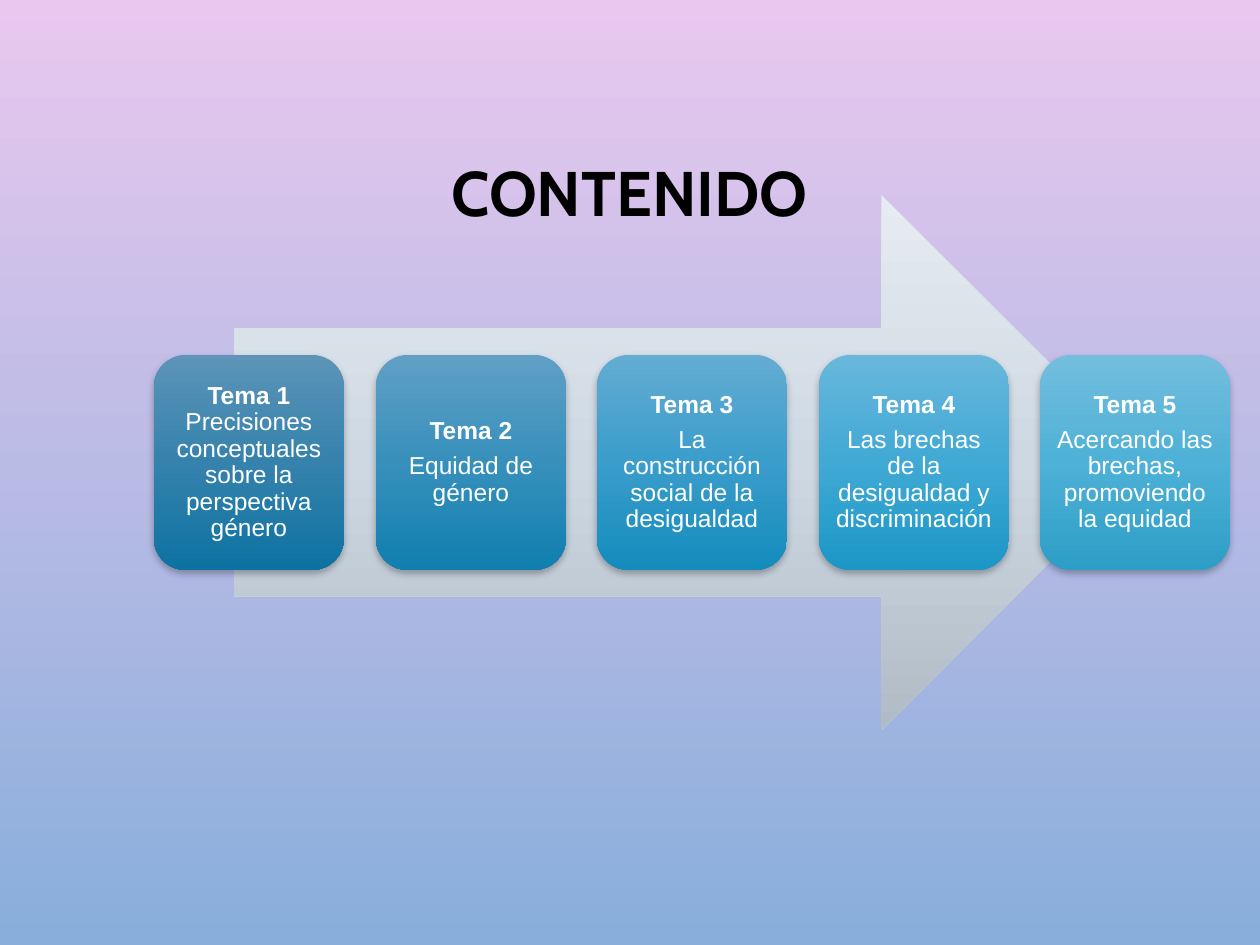
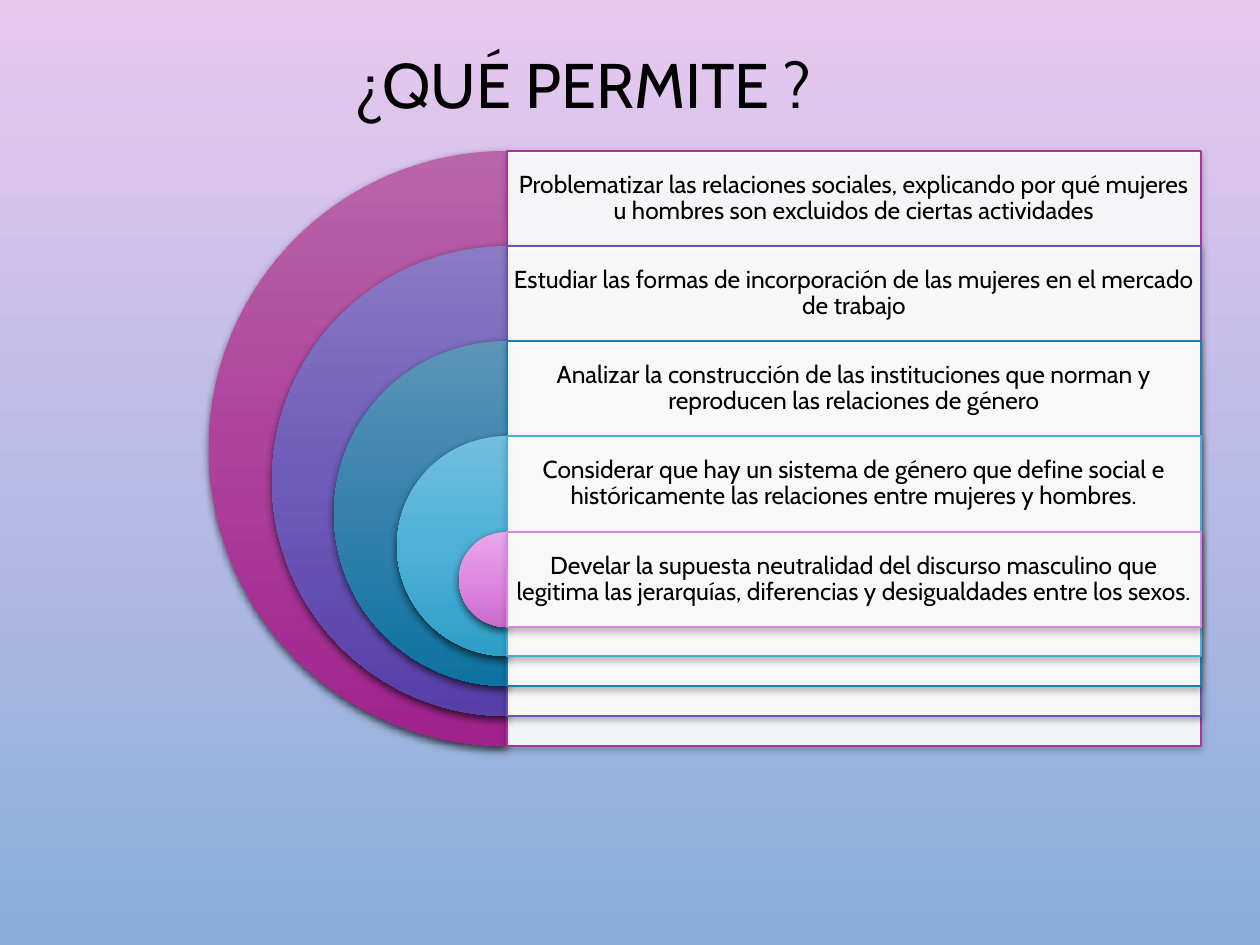
from dataclasses import dataclass

from lxml import etree
from pptx import Presentation
from pptx import util as u
from pptx.dml.color import RGBColor
from pptx.enum import shapes, text
from pptx.oxml.ns import qn

SCALE = 914400 / 126


def px(length):
    return u.Emu(round(length * SCALE))


@dataclass(frozen=True)
class Theme:
    heading_font: str = "Cabin"
    card_font: str = "Arial"
    title_size: int = 36
    body_size: int = 14
    paragraph_gap: int = 5
    line_spacing: float = 0.9
    inset: int = 7
    ink: str = "000000"
    paper: str = "FFFFFF"
    background: tuple = ("E9C8EF", "89AEDB")
    arrow: tuple = ("E6ECF1", "CED8E3", "B0BBC6")
    teal: tuple = ("5D94B8", "3582AD", "0D72A1")
    steel: tuple = ("60A0C5", "3790BC", "107FAF")
    azure: tuple = ("63ACD2", "3A9DCB", "148CBD")
    sky: tuple = ("69B7DC", "40A9D5", "1C97C6")
    aqua: tuple = ("73BEDE", "4EB1D7", "2D9EC6")
    magenta: tuple = ("B965AA", "AE429D", "A0228D")
    violet: tuple = ("887AC4", "6F5BB9", "563FA7")
    pink: tuple = ("E7A8E9", "DF89E2", "C86BCB")
    magenta_border: str = "AC339A"
    violet_border: str = "6953B7"
    teal_border: str = "1D7EAB"
    aqua_border: str = "43AFD6"
    pink_border: str = "DE85E1"


def add_color(parent, color, opacity=100):
    element = etree.SubElement(parent, qn("a:srgbClr"), val=color)
    if opacity < 100:
        etree.SubElement(element, qn("a:alpha"), val=str(opacity * 1000))


def set_gradient(fill, owner, colors):
    fill.gradient()
    fill.gradient_angle = 270
    stops = next(owner.iter(qn("a:gsLst")))
    stops.clear()
    for index, color in enumerate(colors):
        position = index * 100000 // (len(colors) - 1)
        add_color(etree.SubElement(stops, qn("a:gs"), pos=str(position)), color)


def set_shadow(shape, opacity, blur, distance=2):
    effects = shape.element.spPr.find(qn("a:effectLst"))
    shadow = etree.SubElement(
        effects, qn("a:outerShdw"), blurRad=str(u.Pt(blur)),
        dist=str(u.Pt(distance)), dir="5400000", rotWithShape="0")
    add_color(shadow, "000000", opacity)


def write_text(frame, paragraphs, *, font, size, color, spacing, gap=0, inset=None):
    frame.word_wrap = True
    frame.vertical_anchor = text.MSO_ANCHOR.MIDDLE
    if inset is not None:
        frame.margin_left = frame.margin_right = px(inset)
        frame.margin_top = frame.margin_bottom = px(inset)
    for index, runs in enumerate(paragraphs):
        paragraph = frame.paragraphs[0] if index == 0 else frame.add_paragraph()
        paragraph.alignment = text.PP_ALIGN.CENTER
        paragraph.line_spacing = spacing
        paragraph.space_after = u.Pt(gap)
        for words, bold in runs:
            run = paragraph.add_run()
            run.text = words
            run.font.name = font
            run.font.size = u.Pt(size)
            run.font.bold = bold
            run.font.color.rgb = RGBColor.from_string(color)


class Deck:
    def __init__(self, theme):
        self.theme = theme
        self.presentation = Presentation()
        self.presentation.slide_width = px(1260)
        self.presentation.slide_height = px(945)
        self.slide = None

    def new_slide(self):
        self.slide = self.presentation.slides.add_slide(
            self.presentation.slide_layouts[6])
        set_gradient(self.slide.background.fill, self.slide.element,
                     self.theme.background)

    def text_box(self, box, paragraphs, **style):
        shape = self.slide.shapes.add_textbox(*map(px, box))
        write_text(shape.text_frame, paragraphs, color=self.theme.ink,
                   font=self.theme.heading_font,
                   spacing=self.theme.line_spacing, **style)

    def title(self, box, words, bold=False):
        self.text_box(box, [[(words, bold)]], size=self.theme.title_size)

    def shape(self, kind, box):
        shape = self.slide.shapes.add_shape(kind, *map(px, box))
        shape.shadow.inherit = False
        return shape

    def gradient_shape(self, kind, box, colors):
        shape = self.shape(kind, box)
        set_gradient(shape.fill, shape.element, colors)
        shape.line.fill.background()
        return shape

    def card(self, box, colors, paragraphs):
        card = self.gradient_shape(
            shapes.MSO_SHAPE.ROUNDED_RECTANGLE, box, colors)
        set_shadow(card, opacity=28, blur=4)
        write_text(card.text_frame, paragraphs, font=self.theme.card_font,
                   size=self.theme.body_size, color=self.theme.paper,
                   spacing=self.theme.line_spacing,
                   gap=self.theme.paragraph_gap, inset=self.theme.inset)

    def half_disc(self, box, colors):
        disc = self.gradient_shape(shapes.MSO_SHAPE.PIE, box, colors)
        disc.adjustments[0] = 54
        disc.adjustments[1] = 162
        set_shadow(disc, opacity=69, blur=5)

    def panel(self, box, border):
        panel = self.shape(shapes.MSO_SHAPE.RECTANGLE, box)
        panel.fill.solid()
        panel.fill.fore_color.rgb = RGBColor.from_string(self.theme.paper)
        color = panel.element.spPr.find(qn("a:solidFill"))[0]
        etree.SubElement(color, qn("a:alpha"), val="90000")
        panel.line.color.rgb = RGBColor.from_string(border)
        panel.line.width = u.Pt(0.75)
        set_shadow(panel, opacity=28, blur=4)

    def panel_text(self, box, words):
        self.text_box(box, [[(words, False)]], size=self.theme.body_size,
                      gap=self.theme.paragraph_gap, inset=self.theme.inset)


def build_contents(deck):
    theme = deck.theme
    topics = [
        (theme.teal, [[("Tema 1 ", True),
                       ("Precisiones conceptuales sobre la perspectiva género", False)]]),
        (theme.steel, [[("Tema 2", True)], [("Equidad de género", False)]]),
        (theme.azure, [[("Tema 3", True)],
                       [("La construcción social de la desigualdad", False)]]),
        (theme.sky, [[("Tema 4", True)],
                     [("Las brechas de la desigualdad y discriminación", False)]]),
        (theme.aqua, [[("Tema 5", True)],
                      [("Acercando las brechas, promoviendo la equidad", False)]]),
    ]
    deck.new_slide()
    deck.title((94, 86, 1071, 220), "CONTENIDO", bold=True)
    deck.gradient_shape(shapes.MSO_SHAPE.RIGHT_ARROW, (234, 195, 915, 535), theme.arrow)
    for index, (colors, paragraphs) in enumerate(topics):
        left = 154 + (index * 443 + 1) // 2
        deck.card((left, 355, 190, 215), colors, paragraphs)


def build_benefits(deck):
    theme = deck.theme
    benefits = [
        (theme.magenta, theme.magenta_border,
         "Problematizar las relaciones sociales, explicando por qué "
         "mujeres u hombres son excluidos de ciertas actividades"),
        (theme.violet, theme.violet_border,
         "Estudiar las formas de incorporación de las mujeres en el "
         "mercado de trabajo"),
        (theme.teal, theme.teal_border,
         "Analizar la construcción de las instituciones que norman y "
         "reproducen las relaciones de género"),
        (theme.aqua, theme.aqua_border,
         "Considerar que hay un sistema de género que define social e "
         "históricamente las relaciones entre mujeres y hombres."),
        (theme.pink, theme.pink_border,
         "Develar la supuesta neutralidad del discurso masculino que "
         "legitima las jerarquías, diferencias y desigualdades entre los sexos."),
    ]
    center, first_top, band, width = 507, 151, 95, 694
    deck.new_slide()
    deck.title((188, 30, 804, 117), "¿QUÉ PERMITE ? ")
    for index, (colors, border, words) in enumerate(benefits):
        top = first_top + index * 381 // 4
        diameter = 595 - index * 125
        left = center - (diameter + 1) // 2
        deck.half_disc((left, top, diameter, diameter), colors)
        deck.panel((center, top, width, diameter), border)
        deck.panel_text((center, top, width, band), words)


def main():
    deck = Deck(Theme())
    build_contents(deck)
    build_benefits(deck)
    deck.presentation.save("out.pptx")


if __name__ == "__main__":
    main()
